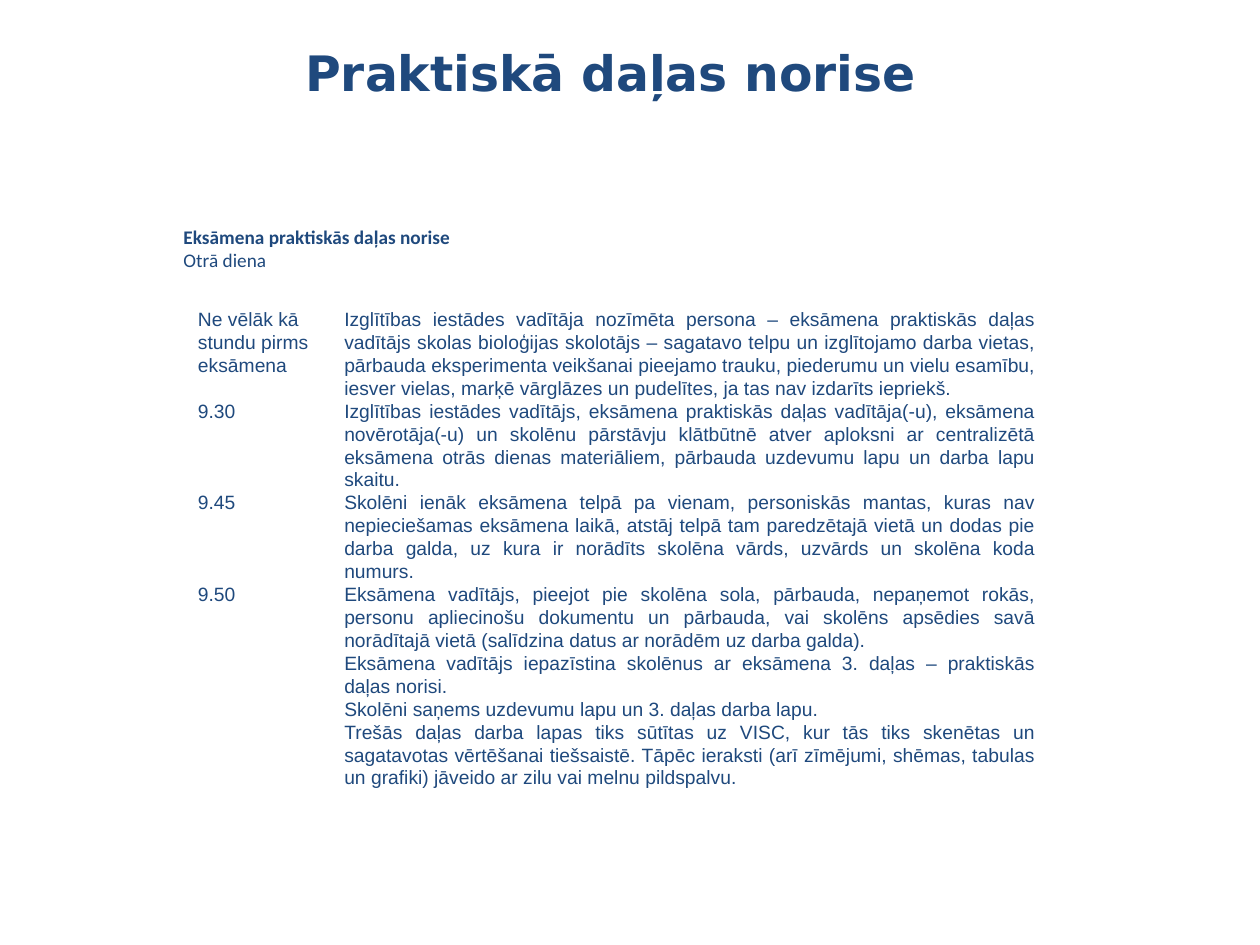
from pptx import Presentation
from pptx.dml.color import RGBColor
from pptx.enum.text import MSO_ANCHOR as Anchor, MSO_AUTO_SIZE as Fit, PP_ALIGN as Align
from pptx.util import Cm, Pt

# Content
NAVY = "1F497D"
TITLE = "Praktiskā daļas norise"
HEAD = "Eksāmena praktiskās daļas norise"
DAY = "Otrā diena"
# Time, paragraphs, lines of text in the row
STEPS = [
    ("Ne vēlāk kā stundu pirms eksāmena", [
        "Izglītības iestādes vadītāja nozīmēta persona – eksāmena praktiskās daļas vadītājs skolas bioloģijas skolotājs – sagatavo telpu un izglītojamo darba vietas, pārbauda eksperimenta veikšanai pieejamo trauku, piederumu un vielu esamību, iesver vielas, marķē vārglāzes un pudelītes, ja tas nav izdarīts iepriekš.",
    ], 4),
    ("9.30", [
        "Izglītības iestādes vadītājs, eksāmena praktiskās daļas vadītāja(-u), eksāmena novērotāja(-u) un skolēnu pārstāvju klātbūtnē atver aploksni ar centralizētā eksāmena otrās dienas materiāliem, pārbauda uzdevumu lapu un darba lapu skaitu.",
    ], 4),
    ("9.45", [
        "Skolēni ienāk eksāmena telpā pa vienam, personiskās mantas, kuras nav nepieciešamas eksāmena laikā, atstāj telpā tam paredzētajā vietā un dodas pie darba galda, uz kura ir norādīts skolēna vārds, uzvārds un skolēna koda numurs.",
    ], 4),
    ("9.50", [
        "Eksāmena vadītājs, pieejot pie skolēna sola, pārbauda, nepaņemot rokās, personu apliecinošu dokumentu un pārbauda, vai skolēns apsēdies savā norādītajā vietā (salīdzina datus ar norādēm uz darba galda).",
        "Eksāmena vadītājs iepazīstina skolēnus ar eksāmena 3. daļas – praktiskās daļas norisi.",
        "Skolēni saņems uzdevumu lapu un 3. daļas darba lapu.",
        "Trešās daļas darba lapas tiks sūtītas uz VISC, kur tās tiks skenētas un sagatavotas vērtēšanai tiešsaistē. Tāpēc ieraksti (arī zīmējumi, shēmas, tabulas un grafiki) jāveido ar zilu vai melnu pildspalvu.",
    ], 9),
]
COLS = [2.95, 14.3]
LINE = 0.46


def write(frame, text, first=True, size=11, font="Arial", color=NAVY,
          bold=False, align=Align.JUSTIFY, space=None):
    para = frame.paragraphs[0] if first else frame.add_paragraph()
    para.alignment = align
    para.line_spacing = space
    run = para.add_run()
    run.text = text
    run.font.size, run.font.name, run.font.bold = Pt(size), font, bold
    run.font.color.rgb = RGBColor.from_string(color)


def place(shape, left, top, width, height):
    shape.left, shape.top = Cm(left), Cm(top)
    shape.width, shape.height = Cm(width), Cm(height)


deck = Presentation()
deck.slide_width, deck.slide_height = Cm(25.4), Cm(19.05)
slide = deck.slides.add_slide(deck.slide_layouts[5])

# Title
title = slide.shapes.title
place(title, 5.9, 0.61, 17.98, 3)
frame = title.text_frame
frame.auto_size, frame.vertical_anchor = Fit.NONE, Anchor.TOP
frame.margin_top = Cm(0.25)
write(frame, TITLE, size=27.9, font="DejaVu Sans", bold=True, align=Align.LEFT)

# Schedule table
table = slide.shapes.add_table(
    len(STEPS), len(COLS), Cm(3.81), Cm(6.2), Cm(sum(COLS)),
    Cm(LINE * sum(step[2] for step in STEPS))).table
table.first_row = table.horz_banding = False
for col, width in zip(table.columns, COLS):
    col.width = Cm(width)
for i, (time, paras, lines) in enumerate(STEPS):
    table.rows[i].height = Cm(LINE * lines)
    for j, texts in enumerate([[time], paras]):
        cell = table.cell(i, j)
        cell.fill.background()
        cell.margin_left = cell.margin_right = Cm(0.18)
        cell.margin_top = cell.margin_bottom = 0
        align = Align.LEFT if i == j == 0 else Align.JUSTIFY
        for n, text in enumerate(texts):
            write(cell.text_frame, text, first=n == 0, align=align, space=1.07)

# Heading above the table
box = slide.shapes.add_textbox(Cm(3.45), Cm(4.42), Cm(6.2), Cm(1.19))
frame = box.text_frame
frame.word_wrap, frame.vertical_anchor = True, Anchor.MIDDLE
write(frame, HEAD, font="Calibri", bold=True)
write(frame, DAY, first=False, font="Calibri")

deck.save("out.pptx")
